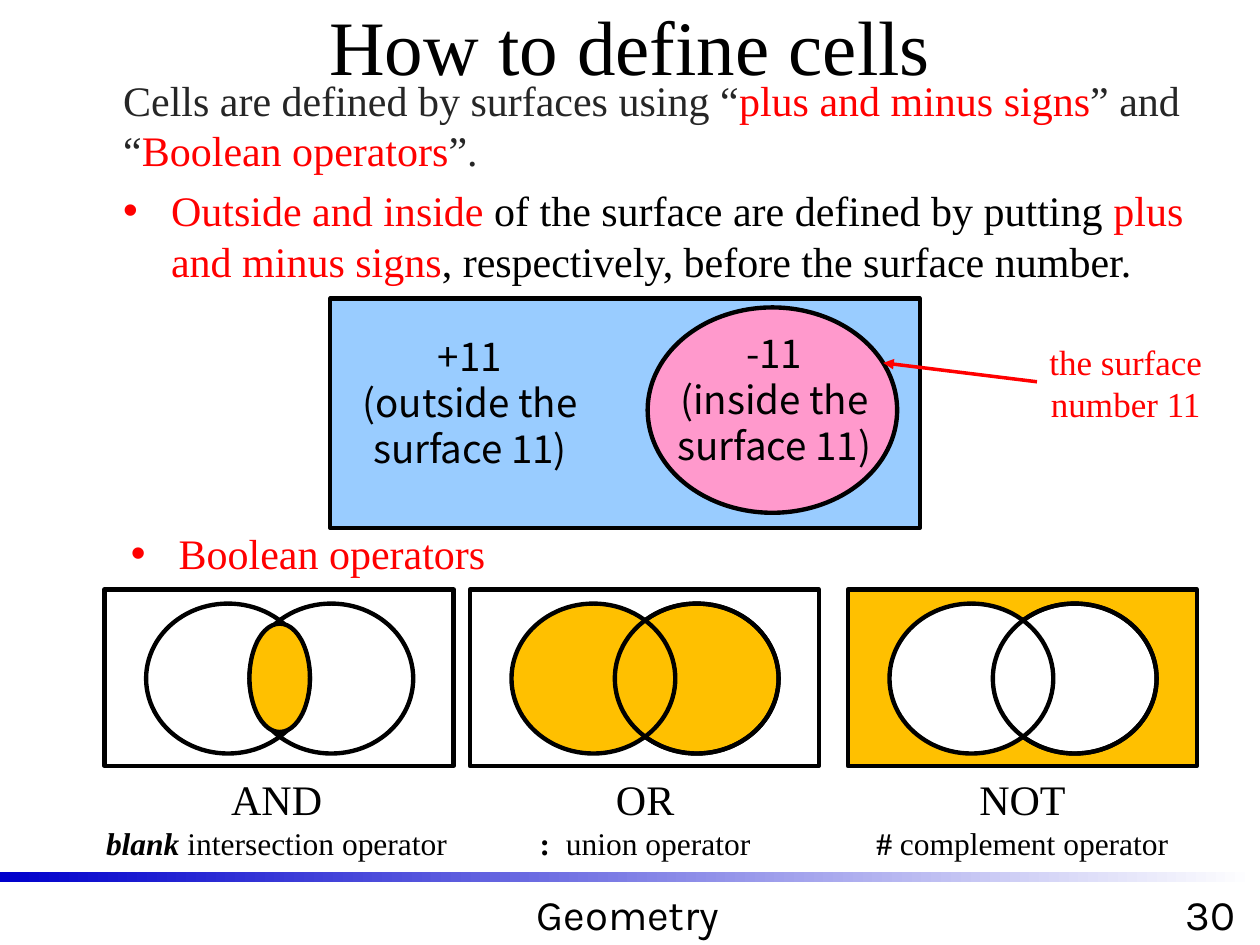
from lxml import etree
from pptx import Presentation
from pptx.dml.color import RGBColor
from pptx.enum.shapes import MSO_CONNECTOR, MSO_SHAPE
from pptx.enum.text import MSO_ANCHOR, PP_ALIGN
from pptx.oxml.ns import qn
from pptx.util import Inches, Pt

BLACK = RGBColor(0x00, 0x00, 0x00)
WHITE = RGBColor(0xFF, 0xFF, 0xFF)
CHARCOAL = RGBColor(0x26, 0x26, 0x26)
RED = RGBColor(0xFF, 0x00, 0x00)
NAVY = RGBColor(0x00, 0x00, 0xCC)
SKY = RGBColor(0x99, 0xCC, 0xFF)
PINK = RGBColor(0xFF, 0x99, 0xCC)
AMBER = RGBColor(0xFF, 0xC0, 0x00)

SERIF = "Times New Roman"
SANS = "Noto Sans CJK KR"
FOOTER = "Karla"


class SlideBuilder:
    outline = Pt(2.5)
    bullet_indent = Inches(0.38)

    def __init__(self, slide):
        self.slide = slide

    def shape(self, kind, left, top, width, height, fill=None, outlined=True):
        shape = self.slide.shapes.add_shape(
            kind, Inches(left), Inches(top), Inches(width), Inches(height))
        shape.shadow.inherit = False
        if fill is None:
            shape.fill.background()
        else:
            shape.fill.solid()
            shape.fill.fore_color.rgb = fill
        if outlined:
            shape.line.color.rgb = BLACK
            shape.line.width = self.outline
        else:
            shape.line.fill.background()
        return shape

    def rect(self, *box, **style):
        return self.shape(MSO_SHAPE.RECTANGLE, *box, **style)

    def ellipse(self, *box, **style):
        return self.shape(MSO_SHAPE.OVAL, *box, **style)

    def fade_bar(self, left, top, width, height, start, end):
        bar = self.rect(left, top, width, height, outlined=False)
        bar.fill.gradient()
        bar.fill.gradient_angle = 0
        for stop, color in zip(bar.fill.gradient_stops, (start, end)):
            stop.color.rgb = color

    def arrow(self, start, end, color, width):
        arrow = self.slide.shapes.add_connector(
            MSO_CONNECTOR.STRAIGHT, *map(Inches, start + end))
        arrow.line.color.rgb = color
        arrow.line.width = Pt(width)
        etree.SubElement(arrow.line._get_or_add_ln(), qn("a:tailEnd"), type="triangle")
        etree.SubElement(arrow._element.spPr, qn("a:effectLst"))

    def text(self, left, top, width, height, anchor=MSO_ANCHOR.TOP):
        box = self.slide.shapes.add_textbox(
            Inches(left), Inches(top), Inches(width), Inches(height))
        frame = box.text_frame
        frame.word_wrap = True
        frame.vertical_anchor = anchor
        return frame

    def paragraph(self, frame, *runs, size=24, font=SERIF, align=PP_ALIGN.CENTER,
                  bullet=False, before=None, spacing=None):
        """Each run is (text, color) or (text, color, bold, italic)."""
        first = frame.paragraphs[0]
        paragraph = frame.add_paragraph() if first.runs else first
        paragraph.alignment = align
        if before:
            paragraph.space_before = Pt(before)
        if spacing:
            paragraph.line_spacing = Pt(spacing)
        if bullet:
            props = paragraph._p.get_or_add_pPr()
            props.set("marL", str(self.bullet_indent))
            props.set("indent", str(-self.bullet_indent))
            etree.SubElement(props, qn("a:buFont"), typeface="Arial")
            etree.SubElement(props, qn("a:buChar"), char="•")
        for content, color, *emphasis in runs:
            run = paragraph.add_run()
            run.text = content
            run.font.name = font
            run.font.size = Pt(size)
            run.font.color.rgb = color
            run.font.bold, run.font.italic = emphasis or (False, False)


def main():
    prs = Presentation()
    prs.slide_width, prs.slide_height = Inches(10), Inches(7.5)
    page = SlideBuilder(prs.slides.add_slide(prs.slide_layouts[6]))

    # Footer
    page.fade_bar(0, 6.92, 9.96, 0.08, NAVY, WHITE)
    for left, width, content in ((9.21, 0.79, "30"), (2.4, 5.17, "Geometry")):
        page.paragraph(page.text(left, 7, width, 0.5), (content, BLACK), font=FOOTER)

    # Title
    title = page.text(0.25, -0.27, 9.5, 1.25, MSO_ANCHOR.MIDDLE)
    page.paragraph(title, ("How to define cells", BLACK), size=44)

    # Introduction
    intro = page.text(0.88, 0.54, 8.64, 1.83)
    page.paragraph(
        intro,
        ("Cells are defined by surfaces using “", CHARCOAL),
        ("plus and minus signs", RED), ("” and “", CHARCOAL),
        ("Boolean operators", RED), ("”.", CHARCOAL),
        align=PP_ALIGN.LEFT)
    page.paragraph(
        intro,
        ("Outside and inside", RED),
        (" of the surface are defined by putting ", BLACK),
        ("plus and minus signs", RED),
        (", respectively, before the surface number.", BLACK),
        align=PP_ALIGN.LEFT, bullet=True, before=5.5)

    # Inside and outside of surface 11
    page.rect(2.62, 2.37, 4.68, 1.82, fill=SKY)
    page.ellipse(5.14, 2.44, 1.98, 1.63, fill=PINK)
    regions = (
        (2.56, 2.59, 2.34, "+11", "(outside the surface 11)"),
        (5.14, 2.57, 2.01, "-11", "(inside the surface 11)"),
    )
    for left, top, width, sign, meaning in regions:
        region = page.text(left, top, width, 1.21)
        for line in (sign, meaning):
            page.paragraph(region, (line, BLACK), size=22, font=SANS, spacing=26.4)
    page.arrow((8.23, 3.03), (7.01, 2.88), RED, 2)
    page.paragraph(page.text(8.06, 2.65, 1.75, 0.77),
                   ("the surface number 11", RED), size=20)

    # Boolean operators
    page.paragraph(page.text(0.94, 4.14, 3.09, 0.54), ("Boolean operators", RED),
                   align=PP_ALIGN.LEFT, bullet=True)
    # Panel left, panel fill, circle fill, label left, label width, name, symbol, role
    operators = (
        (0.83, None, None, 0.67, 3.05, "AND", "blank", " intersection operator"),
        (3.73, None, AMBER, 3.73, 2.78, "OR", ":", "  union operator"),
        (6.73, AMBER, WHITE, 6.73, 2.77, "NOT", "#", " complement operator"),
    )
    for left, panel, circle, label_left, label_width, name, symbol, role in operators:
        right_circle = (left + 1.15, 4.79, 1.3, 1.19)
        page.rect(left, 4.68, 2.77, 1.4, fill=panel)
        page.ellipse(*right_circle, fill=circle)
        page.ellipse(left + 0.33, 4.79, 1.3, 1.19, fill=circle)
        if name == "AND":
            page.ellipse(left + 1.15, 4.95, 0.48, 0.86, fill=AMBER)
        else:
            page.ellipse(*right_circle)
        label = page.text(label_left, 6.09, label_width, 0.81)
        page.paragraph(label, (name, BLACK))
        page.paragraph(label, (symbol, BLACK, True, name == "AND"), (role, BLACK), size=18)

    prs.save("out.pptx")


if __name__ == "__main__":
    main()
